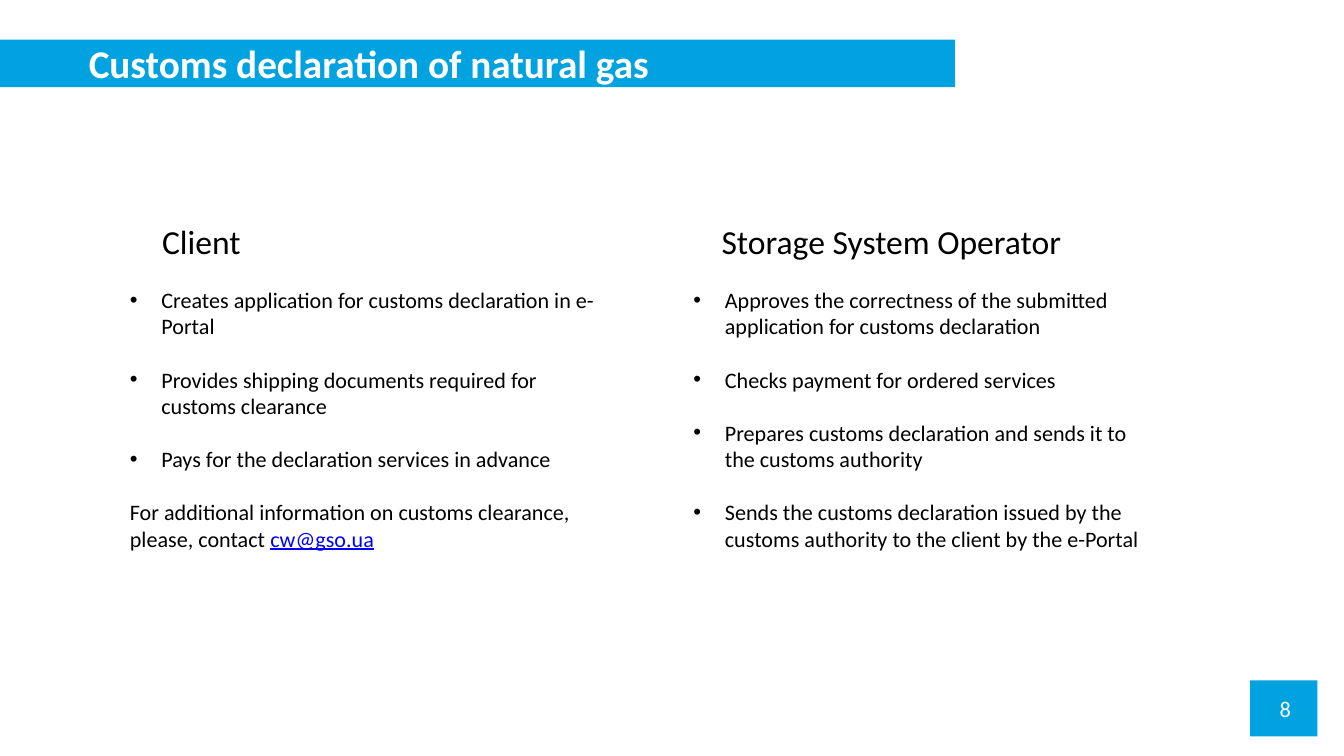
from lxml import etree
from pptx import Presentation
from pptx.dml.color import RGBColor
from pptx.enum.shapes import MSO_SHAPE
from pptx.enum.text import MSO_ANCHOR, MSO_AUTO_SIZE, PP_ALIGN
from pptx.oxml.ns import qn
from pptx.util import Pt

RECT = MSO_SHAPE.RECTANGLE
TOP, MIDDLE = MSO_ANCHOR.TOP, MSO_ANCHOR.MIDDLE
LEFT, CENTER = PP_ALIGN.LEFT, PP_ALIGN.CENTER
NO_FIT = MSO_AUTO_SIZE.NONE

COLORS = {"blue": "00A2DF", "white": "FFFFFF", "black": "000000", "link": "0000FF"}
FONT = "Calibri"
BODY_SIZE = 15.8
ITEM_GAP = 19
BULLET_INDENT = 22.5
HEADING_TOP, HEADING_H = 154, 36
LIST_TOP = 201

CLIENT_ITEMS = [
    "Creates application for customs declaration in e-Portal",
    "Provides shipping documents required for customs clearance",
    "Pays for the declaration services in advance",
]
OPERATOR_ITEMS = [
    "Approves the correctness of the submitted application for customs declaration",
    "Checks payment for ordered services",
    "Prepares customs declaration and sends it to the customs authority",
    "Sends the customs declaration issued by the customs authority "
    "to the client by the e-Portal",
]


def rgb(name):
    return RGBColor.from_string(COLORS[name])


def add_text(p, text, size=BODY_SIZE, color="black", bold=False, underline=False):
    r = p.add_run()
    r.text = text
    r.font.name = FONT
    r.font.size = Pt(size)
    r.font.bold = bold
    r.font.underline = underline
    r.font.color.rgb = rgb(color)


def add_bullet(p):
    pPr = p._p.get_or_add_pPr()
    pPr.set("marL", str(Pt(BULLET_INDENT)))
    pPr.set("indent", str(-Pt(BULLET_INDENT)))
    etree.SubElement(pPr, qn("a:buFont")).set("typeface", "Arial")
    etree.SubElement(pPr, qn("a:buChar")).set("char", "•")


def add_box(s, left, top, width, height):
    sp = s.shapes.add_textbox(Pt(left), Pt(top), Pt(width), Pt(height))
    sp.text_frame.word_wrap = True
    return sp.text_frame


def add_heading(s, text, left, width):
    tf = add_box(s, left, HEADING_TOP, width, HEADING_H)
    add_text(tf.paragraphs[0], text, size=24)


def add_list(s, items, left, width, height):
    tf = add_box(s, left, LIST_TOP, width, height)
    for i, item in enumerate(items):
        p = tf.add_paragraph() if i else tf.paragraphs[0]
        if i:
            p.space_before = Pt(ITEM_GAP)
        add_bullet(p)
        add_text(p, item)
    return tf


def add_contact(tf):
    p = tf.add_paragraph()
    p.space_before = Pt(ITEM_GAP)
    add_text(p, "For additional information on customs clearance, please, contact ")
    add_text(p, "cw@gso.ua", color="link", underline=True)


def add_title(s, text):
    sp = s.shapes.title
    sp.left, sp.top, sp.width, sp.height = Pt(0), Pt(28.3), Pt(682.3), Pt(34)
    sp.fill.solid()
    sp.fill.fore_color.rgb = rgb("blue")
    tf = sp.text_frame
    tf.auto_size = NO_FIT
    tf.vertical_anchor = TOP
    tf.margin_left = Pt(63.4)
    tf.margin_top = tf.margin_right = tf.margin_bottom = 0
    p = tf.paragraphs[0]
    p.alignment = LEFT
    add_text(p, text, size=28, color="white", bold=True)


def add_page_number(s, number):
    sp = s.shapes.add_shape(RECT, Pt(893), Pt(486), Pt(48), Pt(40))
    sp.shadow.inherit = False
    sp.fill.solid()
    sp.fill.fore_color.rgb = rgb("blue")
    sp.line.fill.background()
    tf = sp.text_frame
    tf.vertical_anchor = MIDDLE
    tf.margin_left, tf.margin_right = Pt(7.5), Pt(5.5)
    p = tf.paragraphs[0]
    p.alignment = CENTER
    add_text(p, number, size=16, color="white")


def main():
    prs = Presentation()
    prs.slide_width, prs.slide_height = Pt(960), Pt(540)
    s = prs.slides.add_slide(prs.slide_layouts[5])
    add_title(s, "Customs declaration of natural gas")
    add_heading(s, "Client", 108.7, 72)
    add_contact(add_list(s, CLIENT_ITEMS, 85.7, 357, 257))
    add_heading(s, "Storage System Operator", 508.3, 281)
    add_list(s, OPERATOR_ITEMS, 488.2, 348.5, 199.5)
    add_page_number(s, "8")
    prs.save("out.pptx")


if __name__ == "__main__":
    main()
